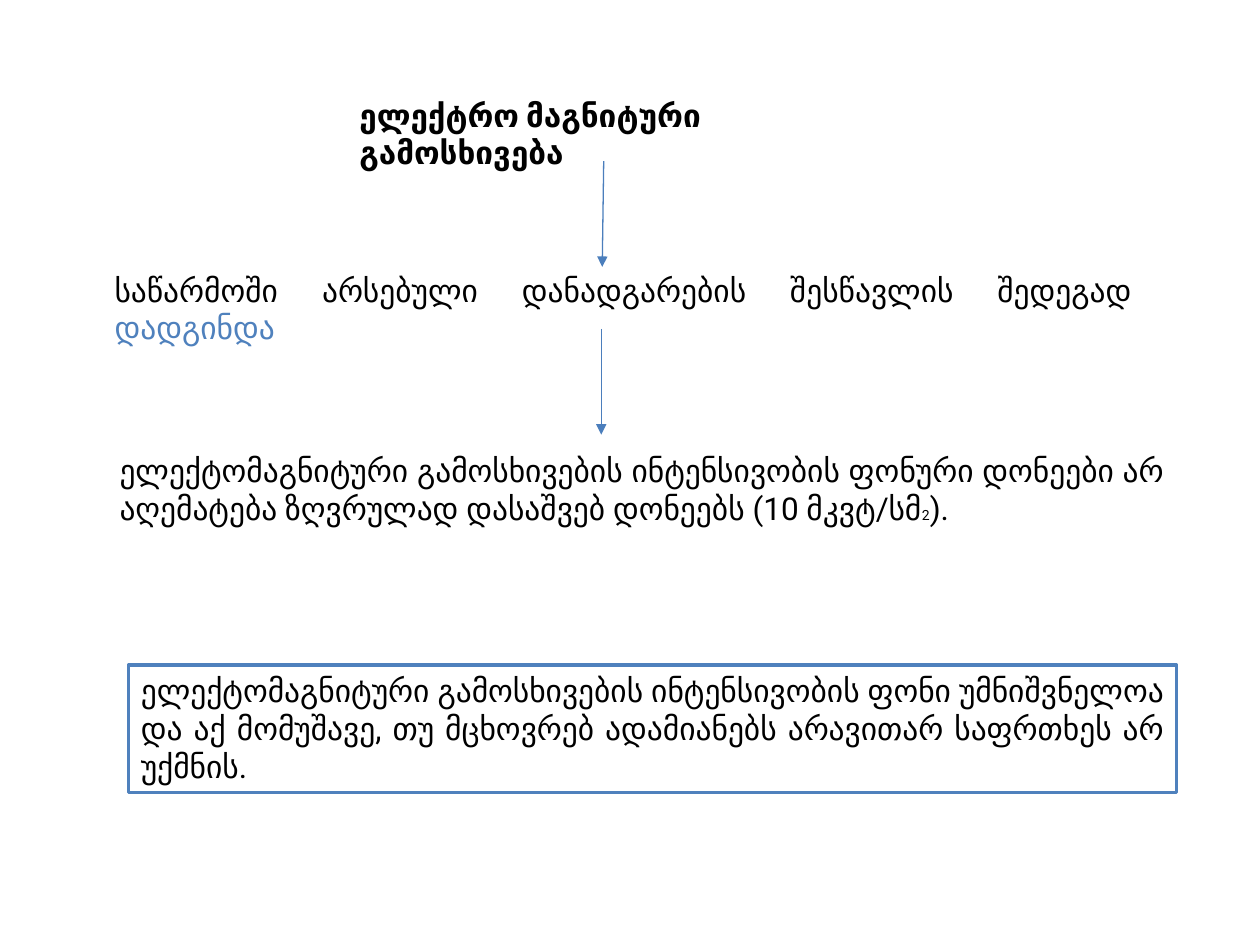
from dataclasses import dataclass
from typing import Optional

import lxml.etree
import pptx
import pptx.dml.color
import pptx.enum.shapes
import pptx.enum.text
import pptx.oxml.ns
import pptx.util
from pptx.util import Cm

BLACK = pptx.dml.color.RGBColor(0x00, 0x00, 0x00)
WHITE = pptx.dml.color.RGBColor(0xFF, 0xFF, 0xFF)
BLUE = pptx.dml.color.RGBColor(0x4F, 0x81, 0xBD)
ARROW_BLUE = pptx.dml.color.RGBColor(0x4B, 0x7E, 0xBC)


@dataclass(frozen=True)
class Span:
    text: str
    size: float = 18
    color: pptx.dml.color.RGBColor = BLACK


@dataclass(frozen=True)
class Statement:
    left: float
    top: float
    width: float
    height: float
    spans: tuple[Span, ...]
    border: Optional[pptx.dml.color.RGBColor] = None


@dataclass(frozen=True)
class Arrow:
    start: tuple[float, float]
    end: tuple[float, float]


TITLE = Statement(6.99, 1.8, 10.69, 1.02, (Span("ელექტრო მაგნიტური გამოსხივება"),))

STATEMENTS = (
    Statement(2.06, 5.33, 21.01, 1.02, (
        Span("საწარმოში არსებული დანადგარების შესწავლის შედეგად "),
        Span("დადგინდა", color=BLUE),
    )),
    Statement(2.16, 8.97, 21.56, 1.8, (
        Span("ელექტომაგნიტური გამოსხივების ინტენსივობის ფონური დონეები არ "
             "აღემატება ზღვრულად დასაშვებ დონეებს (10 მკვტ/სმ"),
        Span("2", size=8),
        Span(")."),
    )),
    Statement(2.59, 13.41, 21.13, 2.57, (
        Span("ელექტომაგნიტური გამოსხივების ინტენსივობის ფონი უმნიშვნელოა და აქ "
             "მომუშავე, თუ მცხოვრებ ადამიანებს არავითარ საფრთხეს არ უქმნის."),
    ), border=BLUE),
)

ARROWS = (
    Arrow((12.17, 3.25), (12.14, 5.38)),
    Arrow((12.12, 6.63), (12.12, 8.76)),
)


def write_text(box, spans: tuple[Span, ...], font: str, bold: bool,
               alignment: pptx.enum.text.PP_ALIGN) -> None:
    frame = box.text_frame
    frame.word_wrap = True
    frame.auto_size = pptx.enum.text.MSO_AUTO_SIZE.SHAPE_TO_FIT_TEXT
    frame.vertical_anchor = pptx.enum.text.MSO_ANCHOR.TOP
    para = frame.paragraphs[0]
    para.alignment = alignment
    for span in spans:
        run = para.add_run()
        run.text = span.text
        run.font.name = font
        run.font.size = pptx.util.Pt(span.size)
        run.font.bold = bold
        run.font.color.rgb = span.color


def place_title(page, title: Statement) -> None:
    box = page.shapes.title
    box.left, box.top = Cm(title.left), Cm(title.top)
    box.width, box.height = Cm(title.width), Cm(title.height)
    write_text(box, title.spans, "Calibri", True, pptx.enum.text.PP_ALIGN.LEFT)


def draw_statement(page, statement: Statement) -> None:
    frame = (Cm(statement.left), Cm(statement.top),
             Cm(statement.width), Cm(statement.height))
    if statement.border is None:
        box = page.shapes.add_textbox(*frame)
    else:
        box = page.shapes.add_shape(pptx.enum.shapes.MSO_SHAPE.RECTANGLE, *frame)
        box.shadow.inherit = False
        box.fill.solid()
        box.fill.fore_color.rgb = WHITE
        box.line.color.rgb = statement.border
        box.line.width = pptx.util.Pt(2)
    write_text(box, statement.spans, "Roboto", False, pptx.enum.text.PP_ALIGN.JUSTIFY)


def draw_arrow(page, arrow: Arrow) -> None:
    connector = page.shapes.add_connector(
        pptx.enum.shapes.MSO_CONNECTOR.STRAIGHT,
        *map(Cm, arrow.start), *map(Cm, arrow.end))
    connector.line.color.rgb = ARROW_BLUE
    connector.line.width = pptx.util.Pt(0.75)
    properties = connector.element.spPr
    outline = properties.find(pptx.oxml.ns.qn("a:ln"))
    lxml.etree.SubElement(outline, pptx.oxml.ns.qn("a:tailEnd"), type="triangle")
    lxml.etree.SubElement(properties, pptx.oxml.ns.qn("a:effectLst"))


def main() -> None:
    deck = pptx.Presentation()
    deck.slide_width, deck.slide_height = Cm(25.4), Cm(19.05)
    page = deck.slides.add_slide(deck.slide_layouts.get_by_name("Title Only"))
    place_title(page, TITLE)
    for statement in STATEMENTS:
        draw_statement(page, statement)
    for arrow in ARROWS:
        draw_arrow(page, arrow)
    deck.save("out.pptx")


if __name__ == "__main__":
    main()
